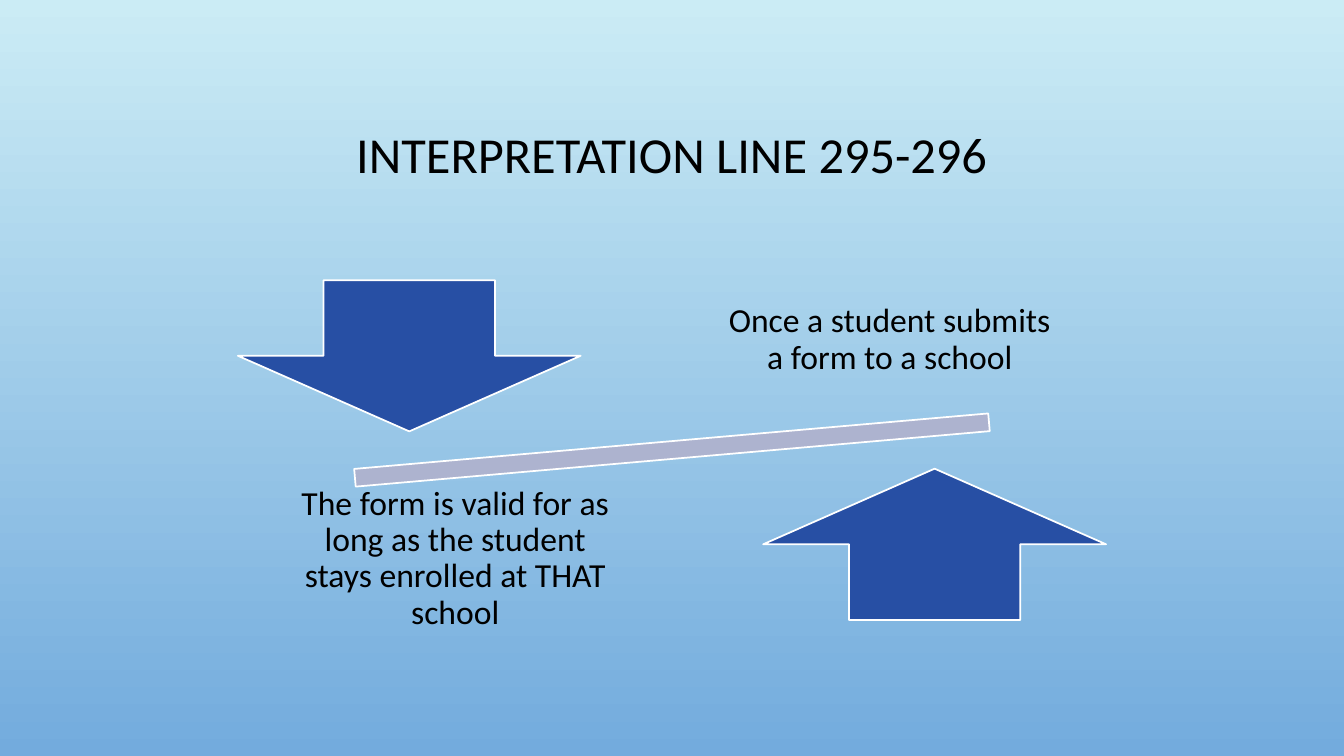
import pptx
import pptx.dml.color
import pptx.enum.shapes
import pptx.enum.text
import pptx.util

Inches = pptx.util.Inches
Pt = pptx.util.Pt
Shape = pptx.enum.shapes.MSO_SHAPE

COLORS = {
    "sky_top": "CBECF5",
    "sky_bottom": "73ABDD",
    "arrow": "274FA4",
    "beam": "ADB3CF",
    "outline": "FFFFFF",
    "text": "000000",
}


def color(name):
    return pptx.dml.color.RGBColor.from_string(COLORS[name])


def add_text(text, left, top, width, height, size=24, inset=0.19):
    """Add a wrapped text box, centred both ways."""
    box = slide.shapes.add_textbox(
        Inches(left), Inches(top), Inches(width), Inches(height))
    frame = box.text_frame
    frame.word_wrap = True
    frame.vertical_anchor = pptx.enum.text.MSO_ANCHOR.MIDDLE
    frame.margin_left = frame.margin_right = Inches(inset)
    frame.margin_top = frame.margin_bottom = Inches(inset)
    para = frame.paragraphs[0]
    para.alignment = pptx.enum.text.PP_ALIGN.CENTER
    para.line_spacing = 0.9
    span = para.add_run()
    span.text = text
    span.font.size = Pt(size)
    span.font.name = "Calibri"
    span.font.color.rgb = color("text")


deck = pptx.Presentation()
deck.slide_width = Inches(13.33)
deck.slide_height = Inches(7.5)
slide = deck.slides.add_slide(deck.slide_layouts[6])

# Background: vertical gradient, light at the top
sky = slide.background.fill
sky.gradient()
sky.gradient_angle = 270
for stop, position, name in zip(sky.gradient_stops, (0, 1), ("sky_top", "sky_bottom")):
    stop.position = position
    stop.color.rgb = color(name)

add_text("INTERPRETATION LINE 295-296", 1, 0.68, 11.33, 1.75, size=36, inset=0.05)

# Tilted beam between two opposing arrows
for kind, left, top, width, height, fill, rotation in (
    (Shape.MATH_MINUS, 2.37, 4.09, 8.59, 0.75, "beam", 355),
    (Shape.DOWN_ARROW, 2.36, 2.78, 3.4, 1.5, "arrow", 0),
    (Shape.UP_ARROW, 7.57, 4.65, 3.4, 1.5, "arrow", 0),
):
    shape = slide.shapes.add_shape(
        kind, Inches(left), Inches(top), Inches(width), Inches(height))
    shape.rotation = rotation
    shape.shadow.inherit = False
    shape.fill.solid()
    shape.fill.fore_color.rgb = color(fill)
    shape.line.color.rgb = color("outline")
    shape.line.width = Pt(1.25)

add_text("Once a student submits a form to a school", 7.01, 2.59, 3.63, 1.57)
add_text("The form is valid for as long as the student stays enrolled at THAT school",
         2.7, 4.76, 3.63, 1.57)

deck.save("out.pptx")
